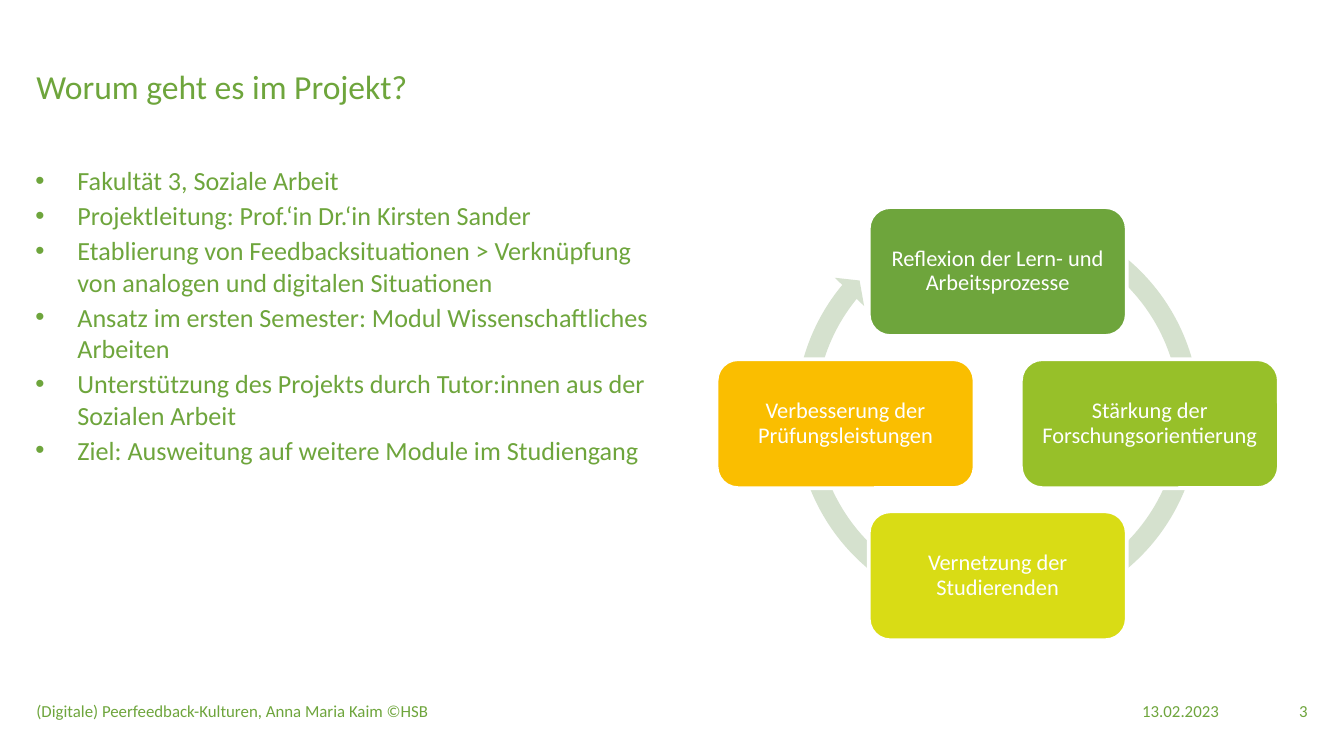
from typing import NamedTuple

from lxml.etree import SubElement
from pptx import Presentation
from pptx.dml.color import RGBColor
from pptx.enum.shapes import MSO_SHAPE
from pptx.enum.text import MSO_ANCHOR, MSO_AUTO_SIZE, PP_ALIGN
from pptx.oxml.ns import qn
from pptx.util import Pt

FONT = "Calibri"
GREEN = "6EA53C"
WHITE = "FFFFFF"
BOX_W, BOX_H = 138.24, 69.12
MID_X, MID_Y = 534.5, 227
STEP = 81.5
RING = 227.5
INDENT = 22.5


class Stage(NamedTuple):
    text: str
    fill: str
    col: int
    row: int


class Note(NamedTuple):
    text: str
    left: float
    width: float
    align: PP_ALIGN


STAGES = [
    Stage("Reflexion der Lern- und Arbeitsprozesse", GREEN, 0, -1),
    Stage("Stärkung der Forschungsorientierung", "97C029", 1, 0),
    Stage("Vernetzung der Studierenden", "D9DC15", 0, 1),
    Stage("Verbesserung der Prüfungsleistungen", "FABE00", -1, 0),
]
NOTES = [
    Note("13.02.2023", 592.5, 60.5, PP_ALIGN.RIGHT),
    Note("(Digitale) Peerfeedback-Kulturen, Anna Maria Kaim ©HSB",
         19.5, 535.5, PP_ALIGN.LEFT),
    Note("3", 669.5, 31, PP_ALIGN.RIGHT),
]
POINTS = [
    "Fakultät 3, Soziale Arbeit",
    "Projektleitung: Prof.‘in Dr.‘in Kirsten Sander",
    "Etablierung von Feedbacksituationen > Verknüpfung von analogen und digitalen Situationen",
    "Ansatz im ersten Semester: Modul Wissenschaftliches Arbeiten",
    "Unterstützung des Projekts durch Tutor:innen aus der Sozialen Arbeit",
    "Ziel: Ausweitung auf weitere Module im Studiengang",
]


def color(code: str) -> RGBColor:
    return RGBColor.from_string(code)


def setup(frame, anchor: MSO_ANCHOR, inset: float = 0) -> None:
    frame.word_wrap = True
    frame.auto_size = MSO_AUTO_SIZE.NONE
    frame.vertical_anchor = anchor
    frame.margin_left = frame.margin_right = Pt(inset)
    frame.margin_top = frame.margin_bottom = Pt(inset)


def write(para, text: str, size: float, tint: str = GREEN,
          align: PP_ALIGN = PP_ALIGN.LEFT) -> None:
    para.alignment = align
    run = para.add_run()
    run.text = text
    run.font.name = FONT
    run.font.size = Pt(size)
    run.font.color.rgb = color(tint)


def bullet(para) -> None:
    props = para._p.get_or_add_pPr()
    props.set("marL", str(Pt(INDENT)))
    props.set("indent", str(-Pt(INDENT)))
    tint = SubElement(props, qn("a:buClr"))
    SubElement(tint, qn("a:srgbClr"), val=GREEN)
    SubElement(props, qn("a:buFont"), typeface="Arial")
    SubElement(props, qn("a:buChar"), char="•")


def draw_title(slide) -> None:
    title = slide.shapes.title
    title.left, title.top = Pt(19.5), Pt(35.5)
    title.width, title.height = Pt(700), Pt(42.5)
    setup(title.text_frame, MSO_ANCHOR.TOP)
    write(title.text_frame.paragraphs[0], "Worum geht es im Projekt?", 18)


def draw_list(slide) -> None:
    box = slide.shapes.add_textbox(Pt(19), Pt(88), Pt(332.5), Pt(181.5))
    frame = box.text_frame
    setup(frame, MSO_ANCHOR.TOP)
    for index, text in enumerate(POINTS):
        para = frame.add_paragraph() if index else frame.paragraphs[0]
        bullet(para)
        if index:
            para.space_before = Pt(2)
        write(para, text, 14)


def draw_ring(slide) -> None:
    ring = slide.shapes.add_shape(
        MSO_SHAPE.CIRCULAR_ARROW, Pt(MID_X - RING / 2), Pt(108),
        Pt(RING), Pt(RING))
    ring.shadow.inherit = False
    for index, value in enumerate((0.047, 2.729, 131.673, 178.063, 0.048)):
        ring.adjustments[index] = value
    ring.fill.solid()
    ring.fill.fore_color.rgb = color("D5E1CE")
    ring.line.fill.background()


def draw_stage(slide, stage: Stage) -> None:
    box = slide.shapes.add_shape(
        MSO_SHAPE.ROUNDED_RECTANGLE,
        Pt(MID_X + stage.col * STEP - BOX_W / 2),
        Pt(MID_Y + stage.row * STEP - BOX_H / 2),
        Pt(BOX_W), Pt(BOX_H))
    box.shadow.inherit = False
    box.fill.solid()
    box.fill.fore_color.rgb = color(stage.fill)
    box.line.color.rgb = color(WHITE)
    box.line.width = Pt(2)
    setup(box.text_frame, MSO_ANCHOR.MIDDLE, 3.6)
    para = box.text_frame.paragraphs[0]
    para.line_spacing = 0.9
    write(para, stage.text, 12, WHITE, PP_ALIGN.CENTER)


def draw_note(slide, note: Note) -> None:
    box = slide.shapes.add_textbox(
        Pt(note.left), Pt(375), Pt(note.width), Pt(11.5))
    setup(box.text_frame, MSO_ANCHOR.MIDDLE)
    write(box.text_frame.paragraphs[0], note.text, 9, align=note.align)


def main() -> None:
    deck = Presentation()
    deck.slide_width, deck.slide_height = Pt(720), Pt(405)
    slide = deck.slides.add_slide(deck.slide_layouts[5])
    draw_title(slide)
    draw_list(slide)
    draw_ring(slide)
    for stage in STAGES:
        draw_stage(slide, stage)
    for note in NOTES:
        draw_note(slide, note)
    deck.save("out.pptx")


if __name__ == "__main__":
    main()
